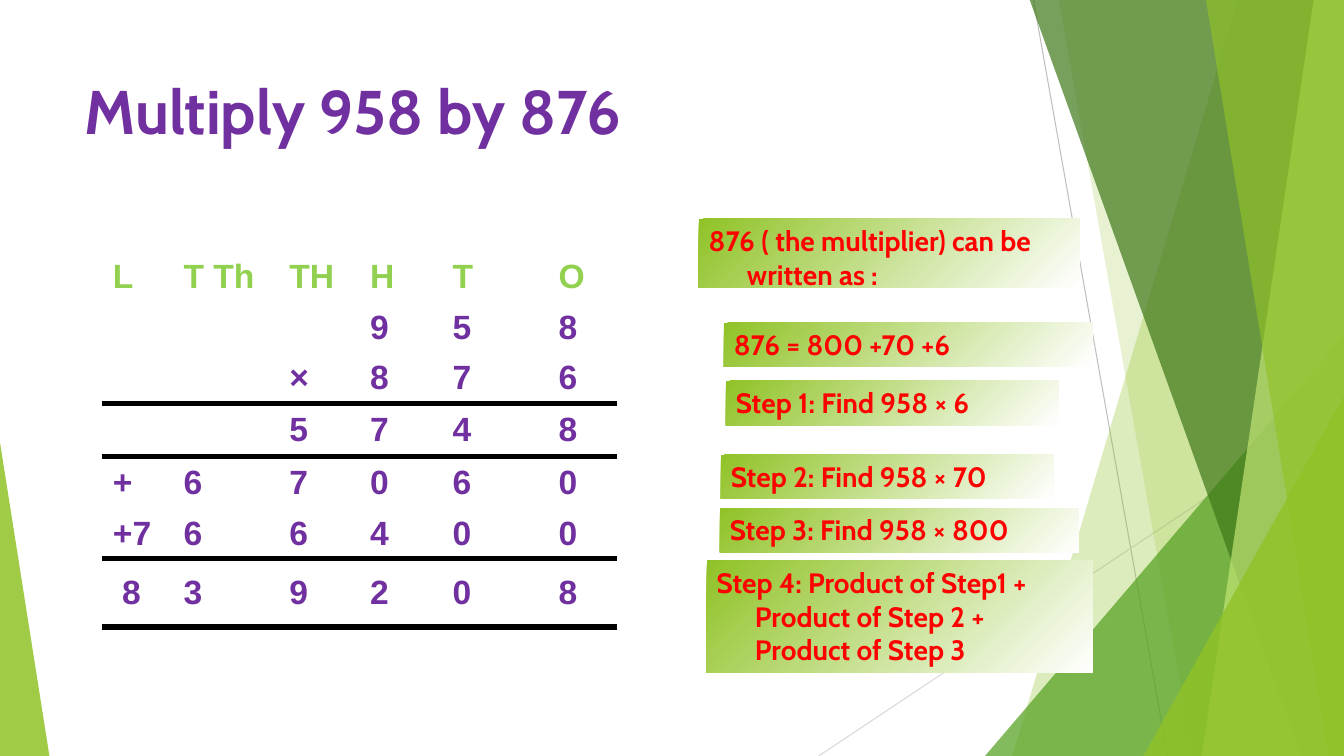
from lxml import etree
from pptx import Presentation
from pptx.dml.color import RGBColor
from pptx.enum import shapes, text
from pptx.oxml.ns import qn
from pptx.util import Inches, Pt

LIME = RGBColor(0x90, 0xC2, 0x26)
LEAF = RGBColor(0x54, 0xA0, 0x21)
FOREST = RGBColor(0x3F, 0x78, 0x19)
PALE_LIME = RGBColor(0xC0, 0xE4, 0x74)
HEADER_GREEN = RGBColor(0x92, 0xD0, 0x50)
PURPLE = RGBColor(0x70, 0x30, 0xA0)
RED = RGBColor(0xFF, 0x00, 0x00)
WHITE = RGBColor(0xFF, 0xFF, 0xFF)
BLACK = RGBColor(0x00, 0x00, 0x00)
GREY = RGBColor(0xBF, 0xBF, 0xBF)
LIGHT_GREY = RGBColor(0xD9, 0xD9, 0xD9)

WIDTH, HEIGHT = 13.33, 7.5
TOP = -0.01

# Left x at the top, left x at the bottom, colour, opacity
BANDS_BEHIND = [(12.28, 10.04, LIME, 30), (10.5, 11.83, LIME, 20)]
BANDS_FRONT = [(10.21, 12.91, FOREST, 70), (13.03, 11.92, PALE_LIME, 70),
               (11.96, 13.18, LIME, 65)]

COLUMNS = [0.7, 1.05, 0.8, 0.82, 1.05, 0.67]
ROWS = [0.47, 0.47, 0.47, 0.53, 0.51, 0.48, 0.68]
DIGITS = [
    ["L", "T Th", "TH", "H", "T", "O"],
    ["", "", "", "9", "5", "8"],
    ["", "", "×", "8", "7", "6"],
    ["", "", "5", "7", "4", "8"],
    ["+", "6", "7", "0", "6", "0"],
    ["+7", "6", "6", "4", "0", "0"],
    [" 8", "3", "9", "2", "0", "8"],
]
RULED_ROWS = {2, 5, 6}

STEPS = [
    (6.93, 2.17, 3.78, 0.68, "876 ( the multiplier) can be written as :"),
    (7.18, 3.2, 3.66, 0.44, "876 = 800 +70 +6"),
    (7.2, 3.78, 3.3, 0.44, "Step 1: Find 958 × 6"),
    (7.15, 4.51, 3.3, 0.44, "Step 2: Find 958 × 70"),
    (7.14, 5.04, 3.56, 0.44, "Step 3: Find 958 × 800"),
    (7.01, 5.56, 3.83, 1.11,
     "Step 4: Product of Step1 + Product of Step 2 + Product of Step 3"),
]


def write(tf, words, font="Cabin", size=20, color=RED, hanging=0):
    """Put one bold, left-aligned paragraph into a text frame."""
    p = tf.paragraphs[0]
    p.alignment = text.PP_ALIGN.LEFT
    if hanging:
        pPr = p._p.get_or_add_pPr()
        pPr.set("marL", str(Inches(hanging)))
        pPr.set("indent", str(-Inches(hanging)))
    r = p.add_run()
    r.text = words
    r.font.name, r.font.size, r.font.bold = font, Pt(size), True
    r.font.color.rgb = color


def rule_cell(cell, edges):
    """Draw thick black borders on the given edges (lnT, lnB)."""
    tcPr = cell._tc.get_or_add_tcPr()
    for i, edge in enumerate(edges):
        ln = etree.Element(qn(f"a:{edge}"), w=str(Pt(4.5)))
        fill = etree.SubElement(ln, qn("a:solidFill"))
        etree.SubElement(fill, qn("a:srgbClr"), val=str(BLACK))
        tcPr.insert(i, ln)


class SlideBuilder:
    def __init__(self, slide):
        self.s = slide

    def line(self, x1, y1, x2, y2, color):
        sp = self.s.shapes.add_connector(
            shapes.MSO_CONNECTOR.STRAIGHT,
            Inches(x1), Inches(y1), Inches(x2), Inches(y2))
        sp.line.color.rgb, sp.line.width = color, Pt(0.75)
        etree.SubElement(sp._element.spPr, qn("a:effectLst"))

    def tint(self, sp, color, opacity):
        """Give a shape a see-through fill and no outline."""
        sp.shadow.inherit = False
        sp.line.fill.background()
        sp.fill.solid()
        sp.fill.fore_color.rgb = color
        clr = sp._element.spPr.find(qn("a:solidFill"))[0]
        etree.SubElement(clr, qn("a:alpha"), val=str(opacity * 1000))

    def band(self, top_x, bottom_x, color, opacity):
        """Full-height band that reaches to the right edge of the slide."""
        outline = self.s.shapes.build_freeform(Inches(top_x), Inches(TOP))
        outline.add_line_segments(
            [(Inches(x), Inches(y)) for x, y in
             ((WIDTH, TOP), (WIDTH, HEIGHT), (bottom_x, HEIGHT))])
        self.tint(outline.convert_to_shape(), color, opacity)

    def triangle(self, x, y, w, apex, color, opacity):
        """Triangle standing on the bottom edge of the slide."""
        sp = self.s.shapes.add_shape(
            shapes.MSO_SHAPE.ISOSCELES_TRIANGLE,
            Inches(x), Inches(y), Inches(w), Inches(HEIGHT - y))
        sp.adjustments[0] = apex
        self.tint(sp, color, opacity)

    def title(self, x, y, w, h, words):
        tf = self.s.shapes.add_textbox(
            Inches(x), Inches(y), Inches(w), Inches(h)).text_frame
        tf.word_wrap = True
        write(tf, words, size=44, color=PURPLE)

    def step(self, x, y, w, h, words):
        sp = self.s.shapes.add_shape(
            shapes.MSO_SHAPE.RECTANGLE,
            Inches(x), Inches(y), Inches(w), Inches(h))
        sp.shadow.inherit = False
        sp.line.fill.background()
        sp.fill.gradient()
        sp.fill.gradient_angle = 315
        for stop, color in zip(sp.fill.gradient_stops, (LIME, WHITE)):
            stop.color.rgb = color
        tf = sp.text_frame
        tf.word_wrap = True
        tf.vertical_anchor = text.MSO_ANCHOR.TOP
        write(tf, words, hanging=0.38)

    def sum_table(self, x, y):
        table = self.s.shapes.add_table(
            len(ROWS), len(COLUMNS), Inches(x), Inches(y),
            Inches(sum(COLUMNS)), Inches(sum(ROWS))).table
        table.first_row = table.horz_banding = False
        for column, width in zip(table.columns, COLUMNS):
            column.width = Inches(width)
        for i, digits in enumerate(DIGITS):
            table.rows[i].height = Inches(ROWS[i])
            edges = ["lnT"] * (i - 1 in RULED_ROWS) + ["lnB"] * (i in RULED_ROWS)
            for j, digit in enumerate(digits):
                cell = table.cell(i, j)
                cell.fill.background()
                cell.vertical_anchor = text.MSO_ANCHOR.MIDDLE
                rule_cell(cell, edges)
                if digit:
                    write(cell.text_frame, digit, font="Arial", size=24,
                          color=PURPLE if i else HEADER_GREEN)


def main():
    prs = Presentation()
    prs.slide_width, prs.slide_height = Inches(WIDTH), Inches(HEIGHT)
    b = SlideBuilder(prs.slides.add_slide(prs.slide_layouts[6]))

    b.line(10.25, 0, 11.58, HEIGHT, GREY)
    b.line(WIDTH, 4.03, 8.12, HEIGHT, LIGHT_GREY)
    for band in BANDS_BEHIND:
        b.band(*band)
    b.triangle(9.77, 3.33, 3.56, 1, LEAF, 72)
    for band in BANDS_FRONT:
        b.band(*band)
    b.triangle(11.34, 3.93, 1.99, 1, LIME, 80)
    b.triangle(0, 4.39, 0.49, 0, LIME, 85)

    b.title(0.74, 0.67, 9.4, 1.44, "Multiply 958 by 876")
    b.sum_table(1.02, 2.5)
    for step in STEPS:
        b.step(*step)
    prs.save("out.pptx")


if __name__ == "__main__":
    main()
